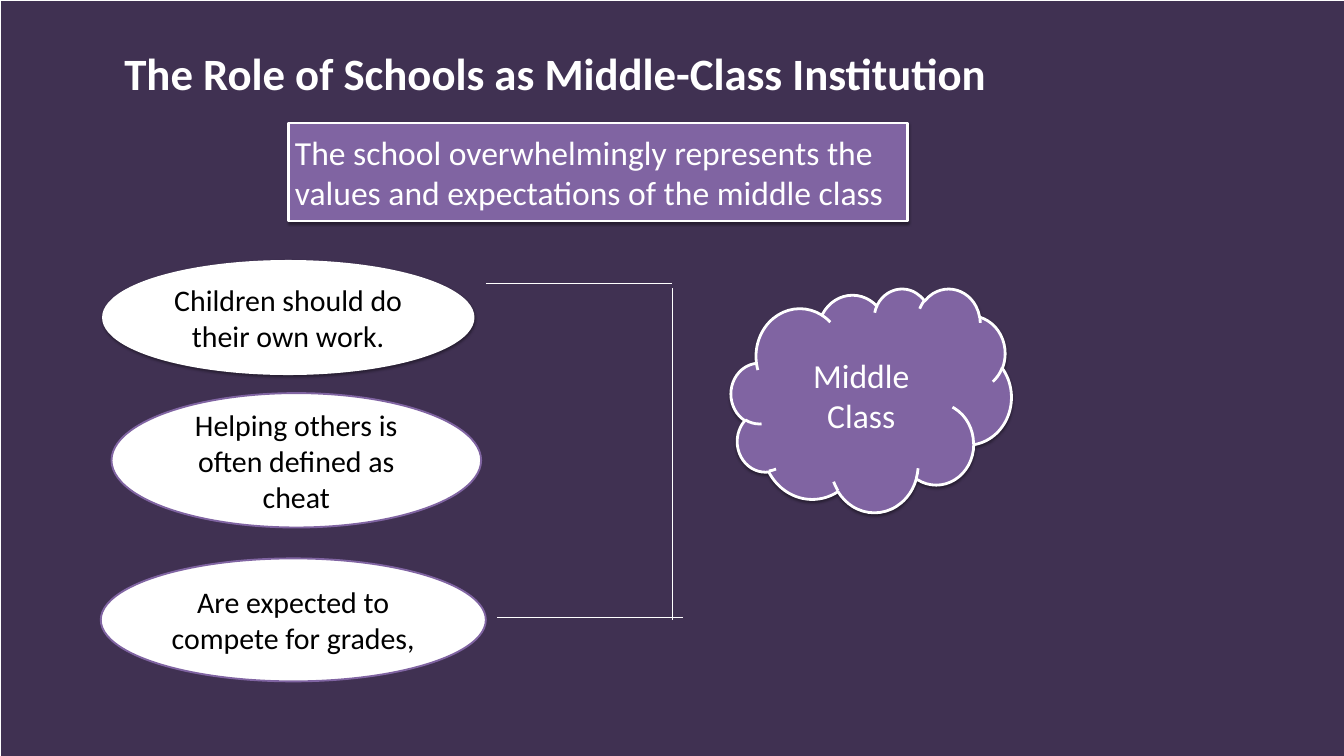
from lxml.etree import SubElement
from pptx import Presentation
from pptx.dml.color import RGBColor
from pptx.enum.shapes import MSO_CONNECTOR, MSO_SHAPE
from pptx.enum.text import MSO_ANCHOR, MSO_AUTO_SIZE, PP_ALIGN
from pptx.oxml.ns import qn
from pptx.util import Inches, Pt

COLUMNS, ROWS = 200, 112.5
WIDTH, HEIGHT = Inches(20), Inches(11.25)

NIGHT = RGBColor(0x40, 0x31, 0x52)
PURPLE = RGBColor(0x80, 0x64, 0xA2)
WHITE = RGBColor(0xFF, 0xFF, 0xFF)
BLACK = RGBColor(0x00, 0x00, 0x00)
FONT = "Calibri"

# Text, grid box (column, row, columns, rows), outline colour, outline width, shadow
EXPECTATIONS = [
    ("Children should do their own work.", (15.4, 38.9, 55, 16.7), WHITE, 3, True),
    ("Helping others is often defined as cheat", (16.6, 58.5, 55, 20), PURPLE, 2, False),
    ("Are expected to compete for grades,", (15, 83.1, 57.3, 18.3), PURPLE, 2, False),
]
# Start and end (column, row) of the bracket joining the expectations
BRACKET = [
    ((72.3, 42.2), (100, 42.2)),
    ((100, 42.9), (100, 92.2)),
    ((74, 91.8), (101.7, 91.8)),
]


def across(columns):
    return round(WIDTH * columns / COLUMNS)


def down(rows):
    return round(HEIGHT * rows / ROWS)


def place(box):
    """Turn a grid box into left, top, width and height."""
    column, row, columns, rows = box
    return across(column), down(row), across(columns), down(rows)


def set_font(paragraph, size, color, bold=False):
    font = paragraph.font
    font.name, font.size, font.bold = FONT, Pt(size), bold
    font.color.rgb = color


def add_effects(drawing):
    return SubElement(drawing.element.spPr, qn("a:effectLst"))


def add_soft_shadow(panel):
    panel.shadow.inherit = False
    effects = panel.element.spPr.find(qn("a:effectLst"))
    shadow = SubElement(effects, qn("a:outerShdw"), blurRad=str(Pt(3.1)),
                        dist=str(Pt(1.6)), dir="5400000", rotWithShape="0")
    color = SubElement(shadow, qn("a:srgbClr"), val=str(BLACK))
    SubElement(color, qn("a:alpha"), val="38000")


def add_panel(slide, kind, box, fill, outline, outline_width, shadow=False):
    panel = slide.shapes.add_shape(kind, *place(box))
    panel.fill.solid()
    panel.fill.fore_color.rgb = fill
    panel.line.color.rgb = outline
    panel.line.width = Pt(outline_width)
    panel.shadow.inherit = False
    if shadow:
        add_soft_shadow(panel)
    return panel


def write(panel, text, size, color, alignment=PP_ALIGN.CENTER):
    frame = panel.text_frame
    frame.word_wrap = True
    frame.vertical_anchor = MSO_ANCHOR.MIDDLE
    paragraph = frame.paragraphs[0]
    paragraph.text = text
    paragraph.alignment = alignment
    set_font(paragraph, size, color)


def add_title(slide, text):
    title = slide.shapes.title
    title.left, title.top, title.width, title.height = place((18.5, 5.6, 146.6, 8.8))
    frame = title.text_frame
    frame.margin_left = frame.margin_right = frame.margin_bottom = 0
    frame.margin_top = Inches(0.01)
    frame.word_wrap = True
    frame.auto_size = MSO_AUTO_SIZE.SHAPE_TO_FIT_TEXT
    frame.vertical_anchor = MSO_ANCHOR.TOP
    paragraph = frame.paragraphs[0]
    paragraph.text = text
    paragraph.alignment = PP_ALIGN.LEFT
    paragraph.line_spacing = 1.13
    paragraph.space_before = Pt(1)
    set_font(paragraph, 48, WHITE, bold=True)


def add_backdrop(slide):
    """Cover the whole slide, behind the title."""
    backdrop = add_panel(slide, MSO_SHAPE.RECTANGLE, (0, 0, COLUMNS, ROWS), NIGHT, WHITE, 0.75)
    slide.shapes.title.element.addprevious(backdrop.element)


def add_bracket_line(slide, start, end):
    line = slide.shapes.add_connector(
        MSO_CONNECTOR.STRAIGHT,
        across(start[0]), down(start[1]), across(end[0]), down(end[1]))
    line.line.color.rgb = WHITE
    line.line.width = Pt(0.75)
    add_effects(line)


def main():
    presentation = Presentation()
    presentation.slide_width, presentation.slide_height = WIDTH, HEIGHT
    slide = presentation.slides.add_slide(presentation.slide_layouts[5])

    add_title(slide, "The Role of Schools as Middle-Class Institution")
    add_backdrop(slide)

    statement = add_panel(slide, MSO_SHAPE.RECTANGLE, (42.9, 18.3, 92.1, 14.6),
                          PURPLE, WHITE, 3, shadow=True)
    write(statement, "The school overwhelmingly represents the values and "
          "expectations of the middle class", 36, WHITE, PP_ALIGN.LEFT)

    for text, box, outline, outline_width, shadow in EXPECTATIONS:
        expectation = add_panel(slide, MSO_SHAPE.OVAL, box, WHITE, outline, outline_width, shadow)
        write(expectation, text, 32, BLACK)

    for start, end in BRACKET:
        add_bracket_line(slide, start, end)

    middle_class = add_panel(slide, MSO_SHAPE.CLOUD, (108.8, 42.9, 41.7, 33.3),
                             PURPLE, WHITE, 3, shadow=True)
    write(middle_class, "Middle Class", 36, WHITE)

    presentation.save("out.pptx")


if __name__ == "__main__":
    main()
